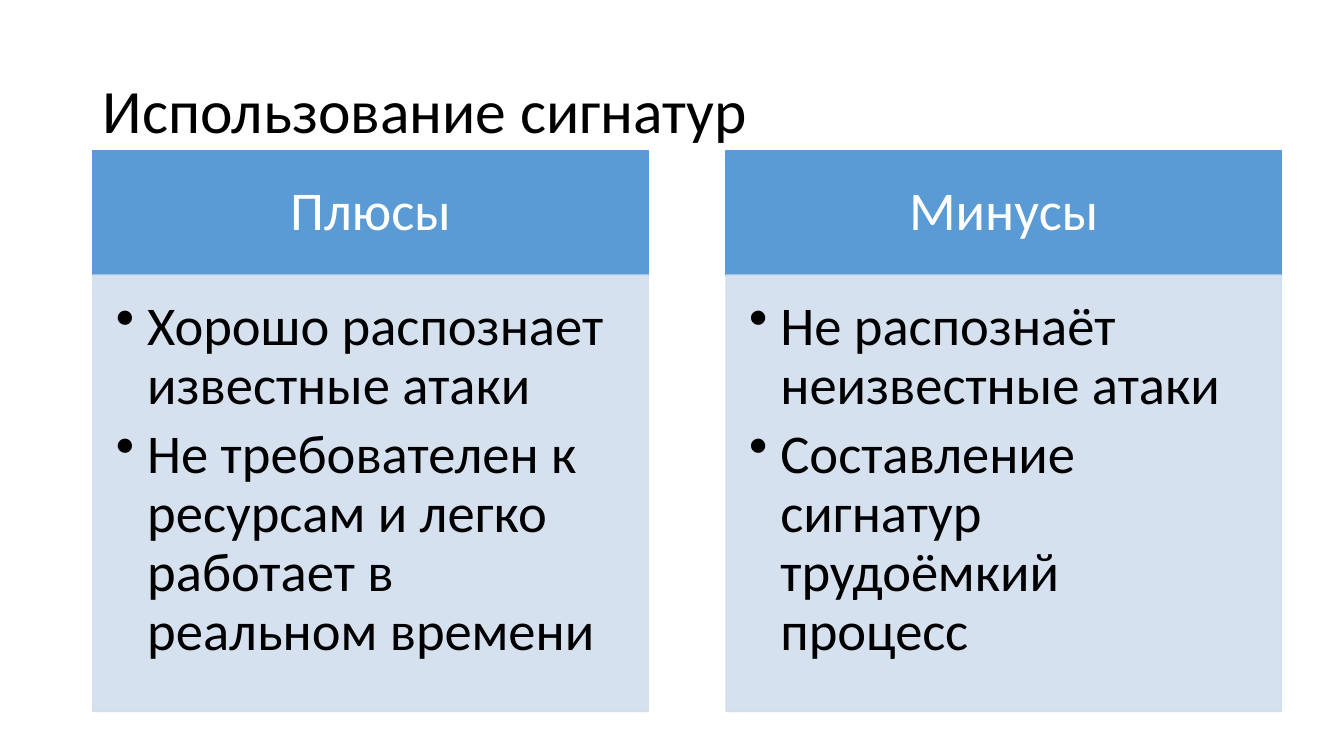
from lxml import etree
from pptx import Presentation
from pptx.dml.color import RGBColor
from pptx.enum.shapes import MSO_SHAPE
from pptx.enum.text import MSO_ANCHOR, MSO_AUTO_SIZE, PP_ALIGN
from pptx.oxml.ns import qn
from pptx.util import Inches, Pt

RECTANGLE = MSO_SHAPE.RECTANGLE
TOP, MIDDLE = MSO_ANCHOR.TOP, MSO_ANCHOR.MIDDLE
LEFT, CENTER = PP_ALIGN.LEFT, PP_ALIGN.CENTER

TITLE = "Использование сигнатур"
COLUMNS = [
    ("Плюсы", [
        "Хорошо распознает известные атаки",
        "Не требователен к ресурсам и легко работает в реальном времени",
    ]),
    ("Минусы", [
        "Не распознаёт неизвестные атаки",
        "Составление сигнатур трудоёмкий процесс",
    ]),
]

FONT = "Calibri"
BLACK, WHITE, BLUE, PALE = "000000", "FFFFFF", "5B9BD5", "D2DEEF"
MARGIN, COLUMN_TOP = 0.92, 1.5
COLUMN_WIDTH, COLUMN_STEP = 5.51, 6.28
HEADER_HEIGHT, BODY_HEIGHT = 1.23, 4.33
HEADER_INSETS = (0.3, 0.17, 0.3, 0.17)
BODY_INSETS = (0.23, 0.23, 0.3, 0.34)
BULLET_INDENT = 0.31


def color(value):
    return RGBColor.from_string(value)


def format_paragraph(para, size, tone, align, space_after=0):
    para.alignment = align
    para.line_spacing = 0.9
    para.space_after = Pt(space_after)
    para.font.name = FONT
    para.font.size = Pt(size)
    para.font.color.rgb = color(tone)


def add_bullet(para):
    properties = para._p.get_or_add_pPr()
    properties.set("marL", str(Inches(BULLET_INDENT)))
    properties.set("indent", str(-Inches(BULLET_INDENT)))
    mark = etree.SubElement(properties, qn("a:buChar"))
    mark.set("char", "•")
    properties.remove(mark)
    properties.find(qn("a:spcAft")).addnext(mark)


def add_panel(page, left, top, height, tone, insets, anchor, opacity=100):
    box = page.shapes.add_shape(RECTANGLE, Inches(left), Inches(top),
                                Inches(COLUMN_WIDTH), Inches(height))
    box.shadow.inherit = False
    box.fill.solid()
    box.fill.fore_color.rgb = color(tone)
    box.line.color.rgb = color(tone)
    box.line.width = Pt(1)
    if opacity < 100:
        for paint in box._element.spPr.iter(qn("a:srgbClr")):
            etree.SubElement(paint, qn("a:alpha")).set("val", str(opacity * 1000))
    frame = box.text_frame
    frame.word_wrap = True
    frame.vertical_anchor = anchor
    (frame.margin_left, frame.margin_top,
     frame.margin_right, frame.margin_bottom) = map(Inches, insets)
    return frame


def add_column(page, left, heading, points):
    header = add_panel(page, left, COLUMN_TOP, HEADER_HEIGHT, BLUE, HEADER_INSETS, MIDDLE)
    header.text = heading
    format_paragraph(header.paragraphs[0], 39, WHITE, CENTER)

    body = add_panel(page, left, COLUMN_TOP + HEADER_HEIGHT, BODY_HEIGHT, PALE,
                     BODY_INSETS, TOP, opacity=90)
    body.text = "\n".join(points)
    for para in body.paragraphs:
        para.level = 1
        format_paragraph(para, 39, BLACK, LEFT, space_after=7)
        add_bullet(para)


def main():
    deck = Presentation()
    deck.slide_width, deck.slide_height = Inches(13.33), Inches(7.5)
    page = deck.slides.add_slide(deck.slide_layouts[5])

    title = page.shapes.title
    title.left, title.top = Inches(MARGIN), Inches(0.4)
    title.width, title.height = Inches(11.5), Inches(1.45)
    title.text_frame.text = TITLE
    title.text_frame.auto_size = MSO_AUTO_SIZE.NONE
    title.text_frame.vertical_anchor = MIDDLE
    format_paragraph(title.text_frame.paragraphs[0], 44, BLACK, LEFT)

    for index, (heading, points) in enumerate(COLUMNS):
        add_column(page, MARGIN + index * COLUMN_STEP, heading, points)

    deck.save("out.pptx")


if __name__ == "__main__":
    main()
